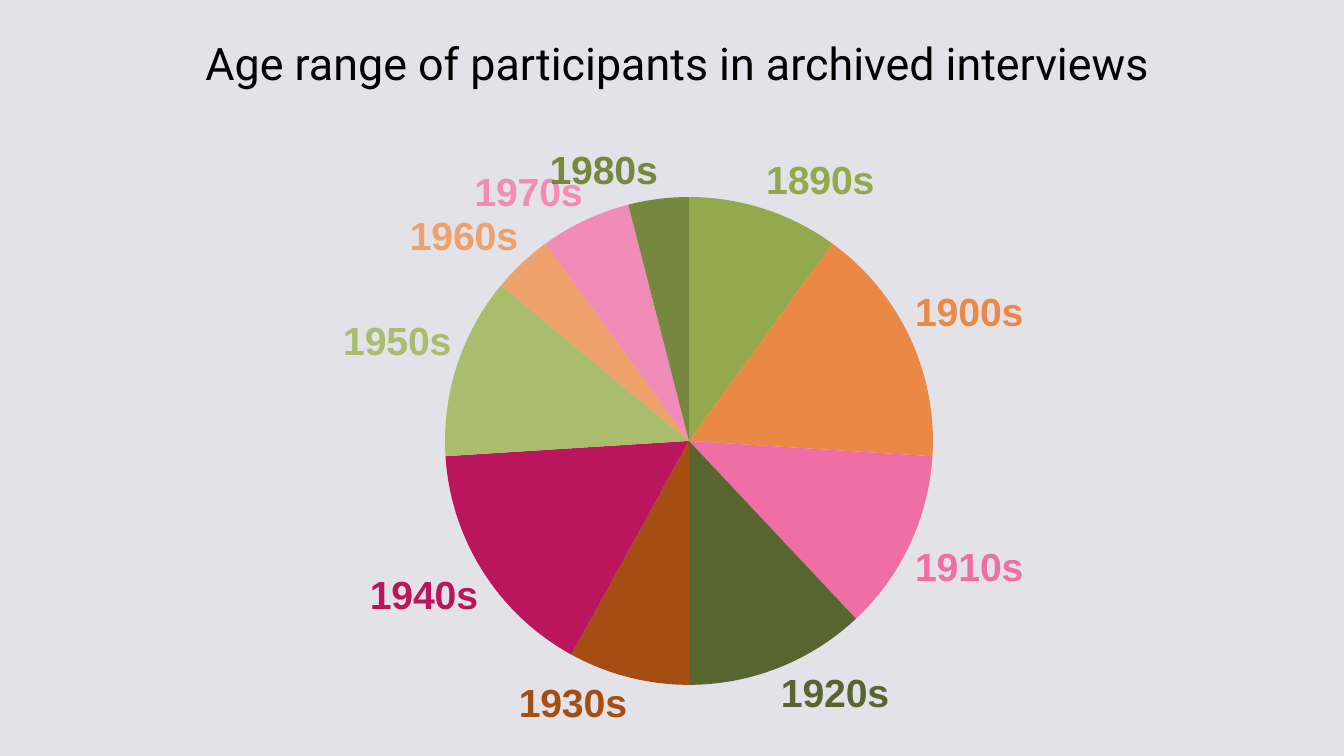
from lxml.etree import SubElement
from pptx import Presentation
from pptx.chart.data import CategoryChartData
from pptx.dml.color import RGBColor
from pptx.enum.chart import XL_CHART_TYPE as ChartType, XL_LABEL_POSITION as LabelPosition
from pptx.enum.text import MSO_ANCHOR as Anchor, MSO_AUTO_SIZE as AutoSize, PP_ALIGN as Align
from pptx.oxml import parse_xml
from pptx.oxml.ns import nsdecls, qn
from pptx.util import Inches, Pt

DECADES = [
    ("1890s", 10, "93A94E"),
    ("1900s", 16, "EA8946"),
    ("1910s", 12, "EE6EA5"),
    ("1920s", 12, "58652F"),
    ("1930s", 8, "A44E13"),
    ("1940s", 16, "BB165D"),
    ("1950s", 12, "AABD6F"),
    ("1960s", 4, "EEA16B"),
    ("1970s", 6, "F18BB7"),
    ("1980s", 4, "76873E"),
]


def set_all(target, values):
    for attribute, value in values.items():
        setattr(target, attribute, value)


def paint(fill, color):
    fill.solid()
    fill.fore_color.rgb = RGBColor.from_string(color)


class SlideBuilder:
    """Holds the style and current slide, measured on a 100 by 100 grid."""

    title_font = {"name": "Roboto", "size": Pt(32), "bold": False}
    label_font = {"name": "Arial", "size": Pt(28), "bold": True}
    text_color = "000000"
    background = "E3E2E8"

    def __init__(self, deck):
        self.column = deck.slide_width / 100
        self.row = deck.slide_height / 100
        self.slide = deck.slides.add_slide(deck.slide_layouts[5])
        paint(self.slide.background.fill, self.background)

    def box(self, left, top, width, height):
        return {
            "left": round(left * self.column),
            "top": round(top * self.row),
            "width": round(width * self.column),
            "height": round(height * self.row),
        }

    def style(self, font, values, color):
        set_all(font, values)
        paint(font.fill, color)

    def title(self, wording, *area):
        heading = self.slide.shapes.title
        set_all(heading, self.box(*area))
        heading.text = wording
        set_all(heading.text_frame, {
            "word_wrap": True,
            "auto_size": AutoSize.SHAPE_TO_FIT_TEXT,
            "vertical_anchor": Anchor.TOP,
        })
        paragraph = heading.text_frame.paragraphs[0]
        paragraph.alignment = Align.CENTER
        self.style(paragraph.runs[0].font, self.title_font, self.text_color)

    def pie(self, slices, area, plot_area):
        names, shares, colors = zip(*slices)
        data = CategoryChartData()
        data.categories = names
        data.add_series("Series 1", shares)
        place = self.box(*area)
        chart = self.slide.shapes.add_chart(
            ChartType.PIE, place["left"], place["top"], place["width"], place["height"], data
        ).chart
        set_all(chart, {"has_title": False, "has_legend": False})
        self.style(chart.font, {"name": "Arial", "size": Pt(10)}, self.text_color)
        chart.plots[0].vary_by_categories = True
        for index, color in enumerate(colors):
            point = chart.plots[0].series[0].points[index]
            paint(point.format.fill, color)
            point.format.line.fill.background()
            point.data_label.position = LabelPosition.OUTSIDE_END
            self.style(point.data_label.font, self.label_font, color)
        self.show_categories(chart)
        self.place_plot(chart, plot_area)

    def show_categories(self, chart):
        for label in chart.element.iter(qn("c:dLbl")):
            for tag in ("showVal", "showPercent", "showCatName"):
                label.find(qn(f"c:{tag}")).set("val", str(int(tag == "showCatName")))

    def place_plot(self, chart, area):
        plot = chart.element.find(".//" + qn("c:plotArea"))
        for automatic in plot.findall(qn("c:layout")):
            plot.remove(automatic)
        layout = parse_xml(f"<c:layout {nsdecls('c')}><c:manualLayout/></c:layout>")
        settings = {"layoutTarget": "inner", "xMode": "edge", "yMode": "edge"}
        settings.update(zip("xywh", (str(round(part / 100, 4)) for part in area)))
        for tag, value in settings.items():
            SubElement(layout[0], qn(f"c:{tag}")).set("val", value)
        plot.insert(0, layout)


def main():
    deck = Presentation()
    set_all(deck, {"slide_width": Inches(13.33), "slide_height": Inches(7.5)})
    builder = SlideBuilder(deck)
    builder.title("Age range of participants in archived interviews", 0.83, 4, 99.17, 15.73)
    builder.pie(DECADES, (3.83, 17.87, 94.45, 80.4), (31, 10.2, 38.45, 80.27))
    deck.save("out.pptx")


if __name__ == "__main__":
    main()
